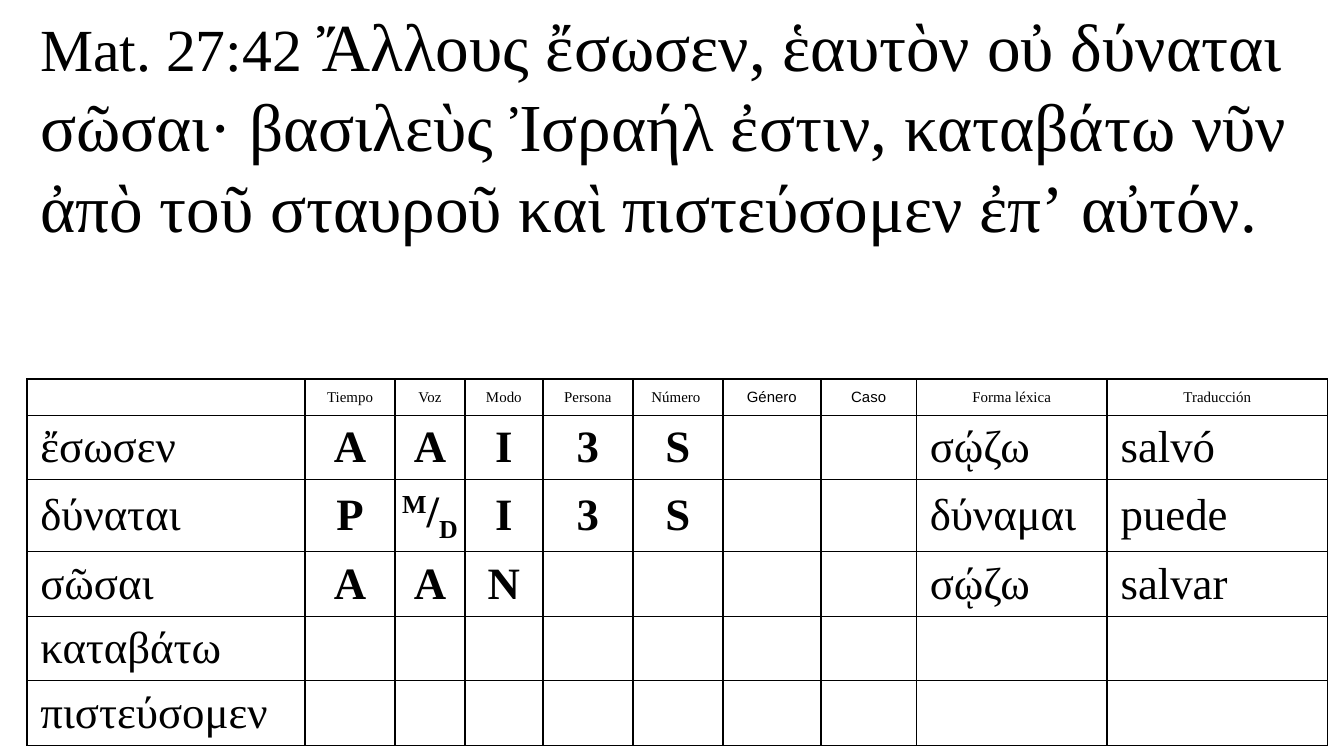
"""Build a slide with a Greek verse and a table that parses its verbs."""
from lxml.etree import SubElement
from pptx import Presentation
from pptx.dml.color import RGBColor
from pptx.enum.text import MSO_ANCHOR, PP_ALIGN
from pptx.oxml.ns import qn
from pptx.util import Inches, Pt

BLACK = RGBColor(0, 0, 0)
SERIF = "Times New Roman"
SANS = "Arial"
COLUMNS = [2.07, 0.67, 0.52, 0.58, 0.67, 0.67, 0.73, 0.71, 1.42, 1.64]
ROWS = [0.27, 0.48, 0.48, 0.48, 0.48, 0.43]
HEADINGS = ["", "Tiempo", "Voz", "Modo", "Persona", "Número ", "Género", "Caso",
            "Forma léxica", "Traducción"]
VERBS = [
    ["ἔσωσεν", "A", "A", "I", "3", "S", "", "", "σῴζω", "salvó"],
    ["δύναται", "P", "M/D", "I", "3", "S", "", "", "δύναμαι", "puede"],
    ["σῶσαι", "A", "A", "N", "", "", "", "", "σῴζω", "salvar"],
    ["καταβάτω"] + [""] * 9,
    ["πιστεύσομεν"] + [""] * 9,
]
BASELINES = {"M": "30000", "/": "0", "D": "-25000"}


def add_span(para, text, size=24, font=SERIF, bold=False, baseline=None):
    span = para.add_run()
    span.text = text
    span.font.size = Pt(size)
    span.font.name = font
    span.font.bold = bold
    span.font.color.rgb = BLACK
    if baseline:
        span.font._element.set("baseline", baseline)


def add_borders(cell, **widths):
    properties = cell._tc.get_or_add_tcPr()
    for position, (side, width) in enumerate(widths.items()):
        line = properties.makeelement(qn(f"a:ln{side}"), {"w": str(Pt(width))})
        fill = SubElement(line, qn("a:solidFill"))
        SubElement(fill, qn("a:srgbClr"), val=str(BLACK))
        properties.insert(position, line)


deck = Presentation()
deck.slide_width = Inches(10)
deck.slide_height = deck.slide_width * 9 // 16
page = deck.slides.add_slide(deck.slide_layouts[6])

box = page.shapes.add_textbox(Inches(0.2), Inches(-0.02), Inches(9.61), Inches(1.92))
box.text_frame.word_wrap = True
verse = box.text_frame.paragraphs[0]
add_span(verse, "Mat. 27:42 ", size=32)
add_span(verse, "Ἄλλους ἔσωσεν, ἑαυτὸν οὐ δύναται σῶσαι· βασιλεὺς Ἰσραήλ ἐστιν, "
         "καταβάτω νῦν ἀπὸ τοῦ σταυροῦ καὶ πιστεύσομεν ἐπʼ αὐτόν.", size=36)

frame = page.shapes.add_table(len(ROWS), len(COLUMNS), Inches(0.2), Inches(2.82),
                              Inches(sum(COLUMNS)), Inches(sum(ROWS)))
table = frame.table
table.first_row = table.horz_banding = False
for column, width in zip(table.columns, COLUMNS):
    column.width = Inches(width)
for row, height in zip(table.rows, ROWS):
    row.height = Inches(height)

for r, texts in enumerate([HEADINGS] + VERBS):
    for c, text in enumerate(texts):
        cell = table.cell(r, c)
        cell.fill.background()
        add_borders(cell, L=1, R=1, T=0.75 if r else 1, B=0.75)
        cell.vertical_anchor = MSO_ANCHOR.MIDDLE
        cell.margin_top = cell.margin_bottom = Inches(0.04)
        cell.margin_left = cell.margin_right = Inches(0 if text == "M/D" else 0.1)
        para = cell.text_frame.paragraphs[0]
        is_code = 1 <= c <= 7
        if r == 0 or is_code:
            para.alignment = PP_ALIGN.CENTER
        if not text:
            SubElement(para._p, qn("a:endParaRPr"), sz="800")
        elif r == 0:
            add_span(para, text, size=8, font=SANS if c in (6, 7) else SERIF)
        elif text == "M/D":
            for letter in text:
                add_span(para, letter, bold=True, baseline=BASELINES[letter])
        else:
            add_span(para, text, bold=is_code)

deck.save("out.pptx")
